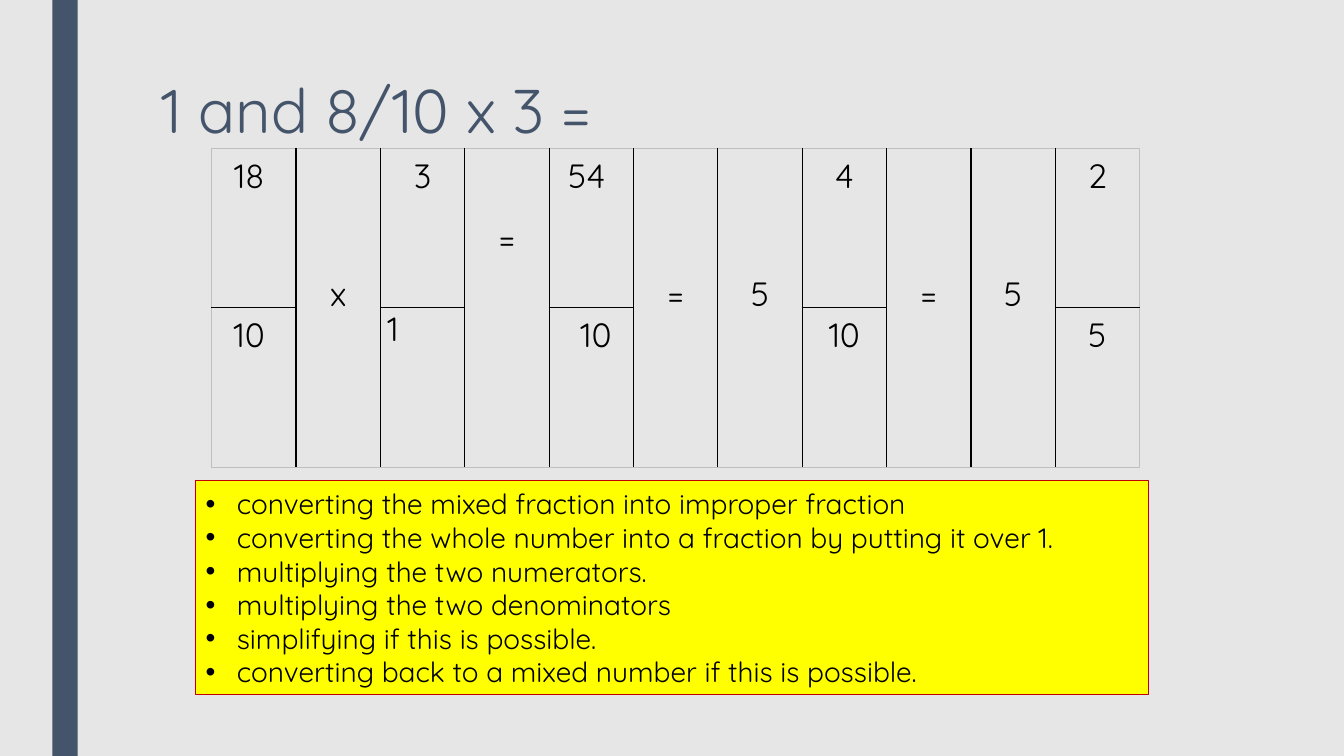
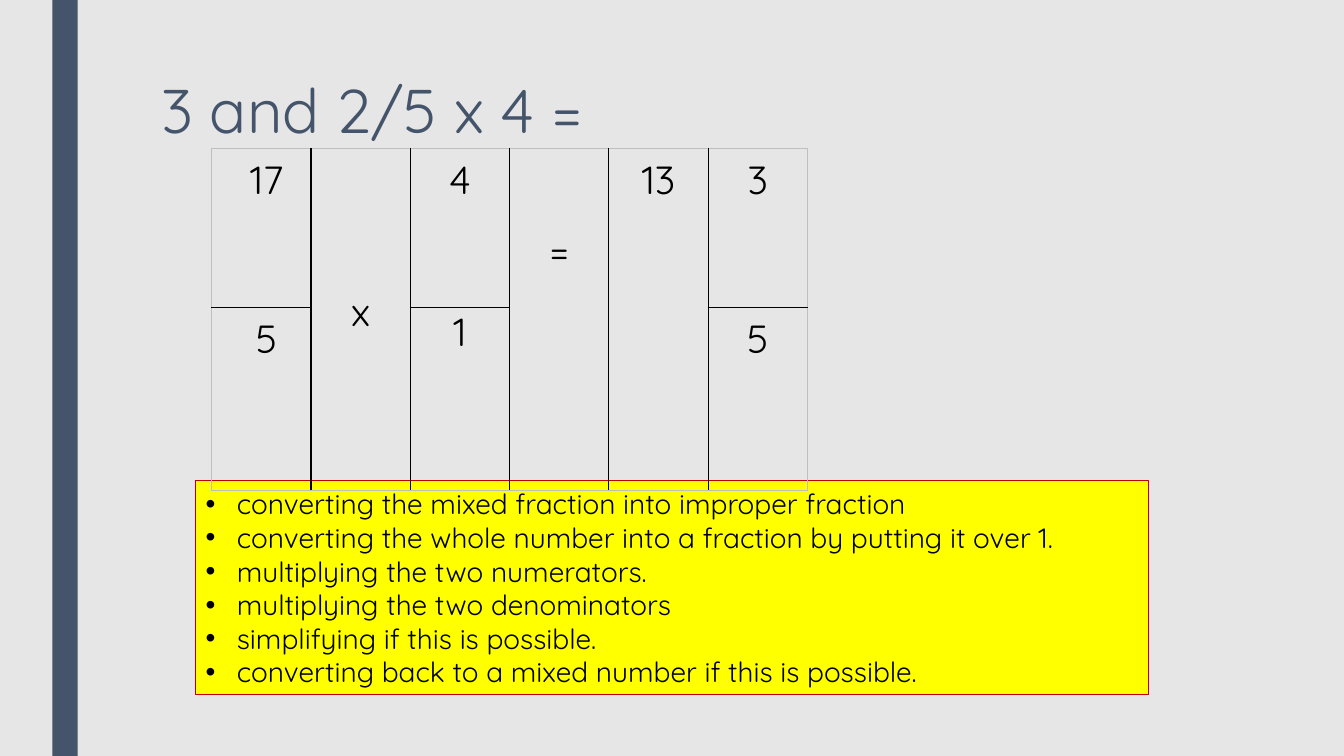
from lxml.etree import SubElement
from pptx import Presentation
from pptx.dml.color import RGBColor
from pptx.enum.shapes import MSO_SHAPE
from pptx.enum.text import MSO_ANCHOR, PP_ALIGN
from pptx.oxml import parse_xml
from pptx.oxml.ns import nsdecls, qn
from pptx.util import Inches, Pt

FONT = "Quicksand"
BACKGROUND = RGBColor(0xE7, 0xE6, 0xE6)
SLATE = RGBColor(0x44, 0x54, 0x6A)
YELLOW = RGBColor(0xFF, 0xFF, 0x00)
RED = RGBColor(0xC0, 0x00, 0x00)
BLACK = RGBColor(0x00, 0x00, 0x00)
GRID_EDGE = RGBColor(0xBF, 0xBF, 0xBF)
NBSP = chr(160)

STEPS = [
    "converting the mixed fraction into improper fraction",
    "converting the whole number into a fraction by putting it over 1.",
    "multiplying the two numerators.",
    "multiplying the two denominators",
    "simplifying if this is possible.",
    "converting back to a mixed number if this is possible.",
]

PROBLEMS = [
    {
        "title": "1 and 8/10 x 3 =",
        "size": 24, "column": 0.837, "rows": (1.58, 1.59),
        "high_top": 0.62, "middle_bottom": 0.34, "one_align": PP_ALIGN.LEFT,
        "terms": [
            ("18" + NBSP, "10" + NBSP), ("x", "middle"), ("3", "1"),
            ("=", "high"), ("54" + NBSP, NBSP + "10"), ("=", "middle"),
            ("5", "middle"), ("4", "10"), ("=", "middle"), ("5", "middle"),
            ("2", "5"),
        ],
    },
    {
        "title": "3 and 2/5 x 4 =",
        "size": 28, "column": 0.985, "rows": (1.58, 1.81),
        "high_top": 0.69, "middle_bottom": 0.21, "one_align": PP_ALIGN.CENTER,
        "terms": [
            (NBSP + "17", NBSP + "5"), ("x", "middle"), ("4", "1"),
            ("=", "high"), ("13", "top"), ("3", "5"),
        ],
    },
]
PLACEMENTS = ("top", "high", "middle")


def add_span(para, text, size, color):
    span = para.add_run()
    span.text = text
    span.font.name = FONT
    span.font.size = Pt(size)
    span.font.color.rgb = color


def add_block(page, area, fill, line=None):
    block = page.shapes.add_shape(MSO_SHAPE.RECTANGLE, *map(Inches, area))
    block.shadow.inherit = False
    block.fill.solid()
    block.fill.fore_color.rgb = fill
    if line is None:
        block.line.fill.background()
    else:
        block.line.color.rgb = line
        block.line.width = Pt(0.75)
    return block


def add_page(deck, title):
    page = deck.slides.add_slide(deck.slide_layouts[6])
    page.background.fill.solid()
    page.background.fill.fore_color.rgb = BACKGROUND
    add_block(page, (0.52, 0, 0.25, 7.5), SLATE)
    box = page.shapes.add_textbox(*map(Inches, (1.5, 0.75, 10.5, 1.62)))
    box.text_frame.word_wrap = True
    para = box.text_frame.paragraphs[0]
    para.line_spacing = 0.89
    add_span(para, title, 44, SLATE)
    return page


def add_steps(page):
    frame = add_block(page, (1.94, 4.77, 9.45, 2.12), YELLOW, RED).text_frame
    frame.word_wrap = True
    frame.vertical_anchor = MSO_ANCHOR.MIDDLE
    for index, step in enumerate(STEPS):
        para = frame.add_paragraph() if index else frame.paragraphs[0]
        para.alignment = PP_ALIGN.LEFT
        para.line_spacing = Pt(24)
        add_span(para, step, 20, BLACK)
        props = para._p.get_or_add_pPr()
        props.set("marL", str(Inches(0.31)))
        props.set("indent", str(-Inches(0.31)))
        SubElement(props, qn("a:buFont")).set("typeface", "Arial")
        SubElement(props, qn("a:buChar")).set("char", "•")


def set_borders(cell, outer_sides):
    props = cell._tc.get_or_add_tcPr()
    for index, side in enumerate("LRTB"):
        color, width = (GRID_EDGE, 0.5) if side in outer_sides else (BLACK, 1)
        props.insert(index, parse_xml(
            f'<a:ln{side} {nsdecls("a")} w="{Pt(width)}"><a:solidFill>'
            f'<a:srgbClr val="{color}"/></a:solidFill></a:ln{side}>'))


def fill_cell(cell, text, size, outer_sides):
    cell.margin_left = cell.margin_right = Inches(0.07)
    cell.margin_top = cell.margin_bottom = 0
    cell.fill.background()
    set_borders(cell, outer_sides)
    para = cell.text_frame.paragraphs[0]
    para.alignment = PP_ALIGN.CENTER
    para.line_spacing = 1.15
    add_span(para, text, size, BLACK)
    return para


def add_equation(page, problem):
    terms, size, heights = problem["terms"], problem["size"], problem["rows"]
    width = Inches(problem["column"])
    table = page.shapes.add_table(
        2, len(terms), Inches(2.1), Inches(1.47),
        width * len(terms), Inches(sum(heights))).table
    table.first_row = table.horz_banding = False
    for row, height in zip(table.rows, heights):
        row.height = Inches(height)
    for index, (upper, lower) in enumerate(terms):
        table.columns[index].width = width
        sides = "L" * (index == 0) + "R" * (index == len(terms) - 1)
        top, bottom = table.cell(0, index), table.cell(1, index)
        if lower in PLACEMENTS:
            top.merge(bottom)
            fill_cell(top, upper, size, sides + "TB")
            bottom.fill.background()
            set_borders(bottom, sides + "TB")
            if lower == "high":
                top.margin_top = Inches(problem["high_top"])
            elif lower == "middle":
                top.vertical_anchor = MSO_ANCHOR.MIDDLE
                top.margin_bottom = Inches(problem["middle_bottom"])
        else:
            fill_cell(top, upper, size, sides + "T")
            para = fill_cell(bottom, lower, size, sides + "B")
            if lower == "1":
                para.alignment = problem["one_align"]
                para.line_spacing = 1.0


def main():
    deck = Presentation()
    deck.slide_width, deck.slide_height = Inches(13.33), Inches(7.5)
    for problem in PROBLEMS:
        page = add_page(deck, problem["title"])
        add_steps(page)
        add_equation(page, problem)
    deck.save("out.pptx")


if __name__ == "__main__":
    main()
